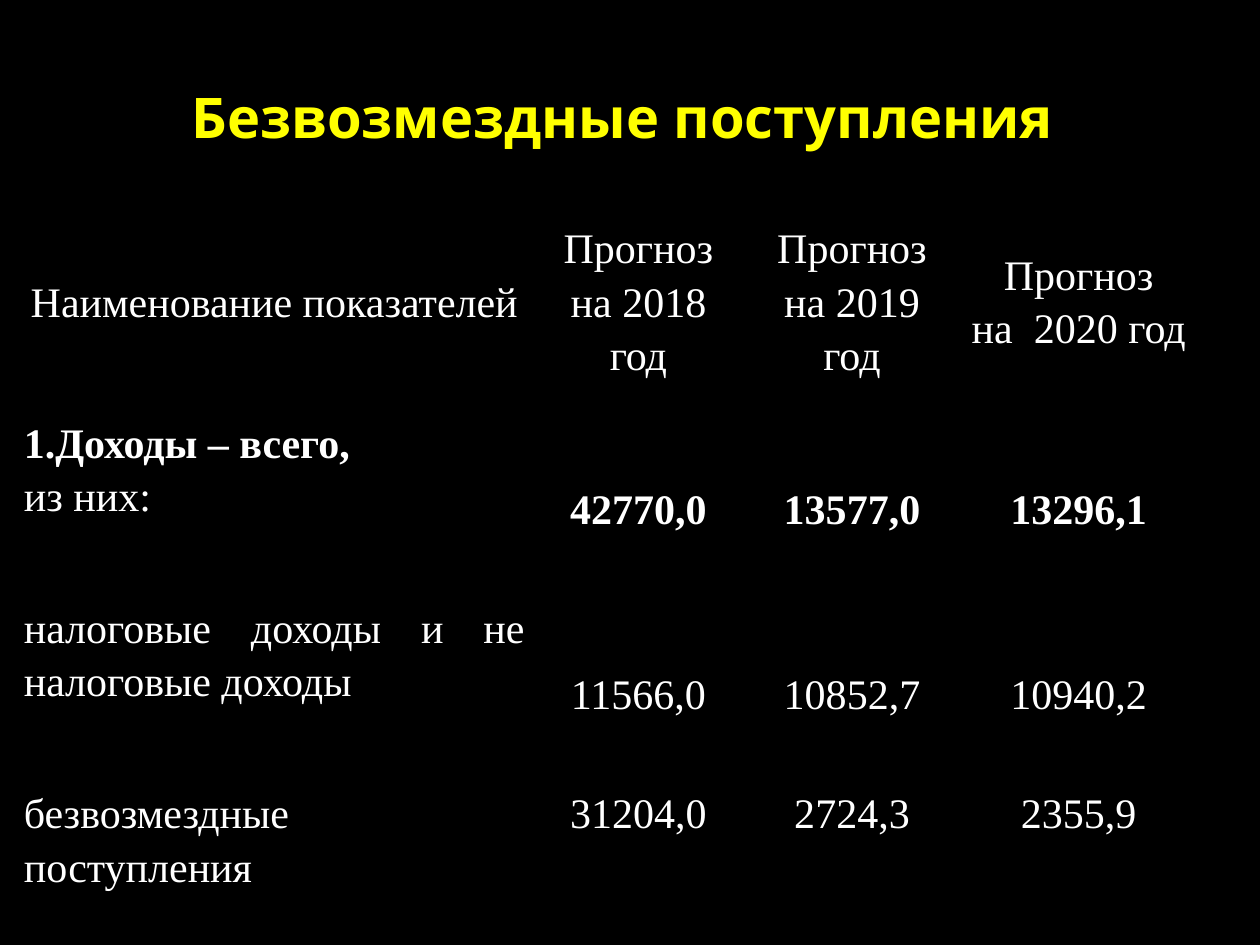
from lxml.etree import SubElement as Sub
from pptx import Presentation
from pptx.dml.color import RGBColor
from pptx.enum.text import MSO_ANCHOR as Anchor, PP_ALIGN as Align
from pptx.oxml.ns import qn
from pptx.util import Cm, Pt


def style(run, face, size, tint, bold):
    font = run.font
    font.name, font.size, font.bold = face, Pt(size), bold
    font.color.rgb = RGBColor.from_string(tint)


def edge(cell, tint):
    props = cell._tc.get_or_add_tcPr()
    for side in ("lnL", "lnR", "lnT", "lnB"):
        line = Sub(props, qn("a:" + side), w=str(Pt(1)))
        fill = Sub(line, qn("a:solidFill"))
        Sub(fill, qn("a:srgbClr"), val=tint)


deck = Presentation()
deck.slide_width, deck.slide_height = Cm(25.4), Cm(19.05)
slide = deck.slides.add_slide(deck.slide_layouts[5])
back = slide.background.fill
back.solid()
back.fore_color.rgb = RGBColor.from_string("000000")

title = slide.shapes.title
title.left, title.top = Cm(1.27), Cm(0.76)
title.width, title.height = Cm(22.86), Cm(3.18)
frame = title.text_frame
frame.text = "Безвозмездные поступления "
frame.vertical_anchor = Anchor.MIDDLE
head = frame.paragraphs[0]
head.alignment = Align.CENTER
style(head.runs[0], "Open Sans", 32, "FFFF00", True)

rows = [
    ["Наименование показателей", "Прогноз\nна 2018 год", "Прогноз\nна 2019 год", "Прогноз\nна  2020 год"],
    ["1.Доходы – всего, \nиз них:", "42770,0", "13577,0", "13296,1"],
    ["налоговые доходы и не налоговые доходы", "11566,0", "10852,7", "10940,2"],
    ["безвозмездные поступления", "31204,0", "2724,3", "2355,9"],
]
wide = [10.46, 4.22, 4.39, 4.75]
high = [4.62, 3.73, 3.73, 2.49]
table = slide.shapes.add_table(
    len(rows), len(wide), Cm(0.3), Cm(3.73), Cm(sum(wide)), Cm(sum(high))
).table
table.first_row = table.horz_banding = False
for col, size in zip(table.columns, wide):
    col.width = Cm(size)
for row, size in zip(table.rows, high):
    row.height = Cm(size)

for r, row in enumerate(rows):
    for c, text in enumerate(row):
        cell = table.cell(r, c)
        label = r > 0 and c == 0
        cell.text_frame.text = text
        cell.margin_left = cell.margin_right = Cm(0.18)
        cell.margin_top = cell.margin_bottom = 0
        cell.vertical_anchor = Anchor.TOP if label or r == 3 else Anchor.MIDDLE
        edge(cell, "000000")
        cell.fill.background()
        for n, para in enumerate(cell.text_frame.paragraphs):
            para.alignment = Align.JUSTIFY if label else Align.CENTER
            para.line_spacing = 1.15
            style(para.runs[0], "Times New Roman", 24, "FFFFFF", r == 1 and n == 0)

deck.save("out.pptx")
